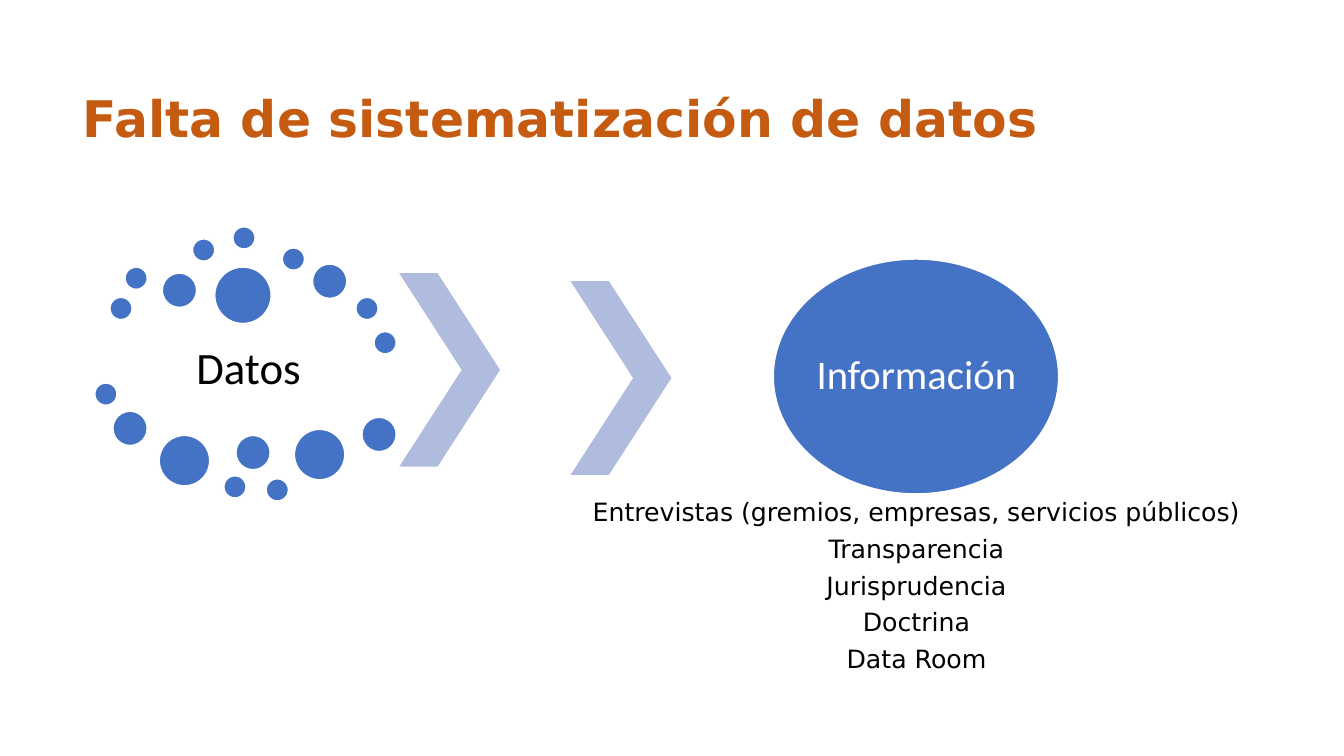
from pptx import Presentation
from pptx.dml.color import RGBColor
from pptx.enum.shapes import MSO_SHAPE
from pptx.enum.text import MSO_ANCHOR, PP_ALIGN
from pptx.util import Inches, Pt

ORANGE = RGBColor(0xC5, 0x5A, 0x11)
BLUE = RGBColor(0x44, 0x72, 0xC4)
PALE_BLUE = RGBColor(0xB0, 0xBC, 0xDE)
WHITE = RGBColor(0xFF, 0xFF, 0xFF)
BLACK = RGBColor(0, 0, 0)
HEADING_FONT = "DejaVu Sans"
LABEL_FONT = "Calibri"

TITLE = "Falta de sistematización de datos"
SOURCES = [
    "Entrevistas (gremios, empresas, servicios públicos)",
    "Transparencia",
    "Jurisprudencia",
    "Doctrina",
    "Data Room",
]
# Diameter of the dots: left and top of each one
DOTS = {
    0.22: [(1.09, 2.95), (1.24, 2.65), (1.91, 2.37), (2.31, 2.25), (2.8, 2.46),
           (3.53, 2.95), (3.71, 3.29), (0.94, 3.8), (2.22, 4.72), (2.64, 4.75)],
    0.34: [(1.61, 2.71), (3.1, 2.62), (1.12, 4.08), (2.34, 4.32), (3.59, 4.14)],
    0.5: [(1.58, 4.32), (2.92, 4.26)],
    0.56: [(2.13, 2.65)],
}
CHEVRONS = [(3.96, 2.71), (5.66, 2.79)]


def add_filled_shape(slide, preset, box, fill):
    shape = slide.shapes.add_shape(preset, *map(Inches, box))
    shape.shadow.inherit = False
    shape.fill.solid()
    shape.fill.fore_color.rgb = fill
    shape.line.fill.background()
    return shape


def add_ellipse(slide, box):
    ellipse = add_filled_shape(slide, MSO_SHAPE.OVAL, box, BLUE)
    ellipse.line.color.rgb = WHITE
    ellipse.line.width = Pt(1)


def write_run(paragraph, text, font, size, color, bold=False):
    paragraph.line_spacing = 0.9
    run = paragraph.add_run()
    run.text = text
    run.font.name = font
    run.font.size = Pt(size)
    run.font.color.rgb = color
    run.font.bold = bold


def add_text(slide, box, lines, font, size, color, inset, anchor=MSO_ANCHOR.MIDDLE):
    frame = slide.shapes.add_textbox(*map(Inches, box)).text_frame
    frame.word_wrap = True
    frame.vertical_anchor = anchor
    frame.margin_left = frame.margin_right = Inches(inset)
    frame.margin_top = frame.margin_bottom = Inches(inset)
    for index, line in enumerate(lines):
        paragraph = frame.add_paragraph() if index else frame.paragraphs[0]
        paragraph.alignment = PP_ALIGN.CENTER
        if line != lines[-1]:
            paragraph.space_after = Pt(6.8)
        write_run(paragraph, line, font, size, color)


def main():
    presentation = Presentation()
    presentation.slide_width = Inches(13.33)
    presentation.slide_height = Inches(7.5)
    slide = presentation.slides.add_slide(presentation.slide_layouts[5])

    title = slide.shapes.title
    title.left, title.top, title.width, title.height = map(Inches, (0.72, 0.48, 11.5, 1.45))
    title.text_frame.vertical_anchor = MSO_ANCHOR.MIDDLE
    heading = title.text_frame.paragraphs[0]
    heading.alignment = PP_ALIGN.LEFT
    write_run(heading, TITLE, HEADING_FONT, 36, ORANGE, bold=True)

    add_text(slide, (0.97, 3.22, 2.99, 0.9), ["Datos"], LABEL_FONT, 32, BLACK, 0.04)
    for diameter, corners in DOTS.items():
        for left, top in corners:
            add_ellipse(slide, (left, top, diameter, diameter))

    for left, top in CHEVRONS:
        chevron = add_filled_shape(slide, MSO_SHAPE.CHEVRON, (left, top, 1, 1.92), PALE_BLUE)
        chevron.adjustments[0] = 0.62

    add_ellipse(slide, (7.67, 2.57, 2.83, 2.33))
    add_text(slide, (8.09, 2.91, 2, 1.65), ["Información"], LABEL_FONT, 29, WHITE, 0)
    add_text(slide, (5.78, 4.93, 6.62, 1.87), SOURCES, HEADING_FONT, 18, BLACK, 0.03,
             MSO_ANCHOR.TOP)

    presentation.save("out.pptx")


if __name__ == "__main__":
    main()
